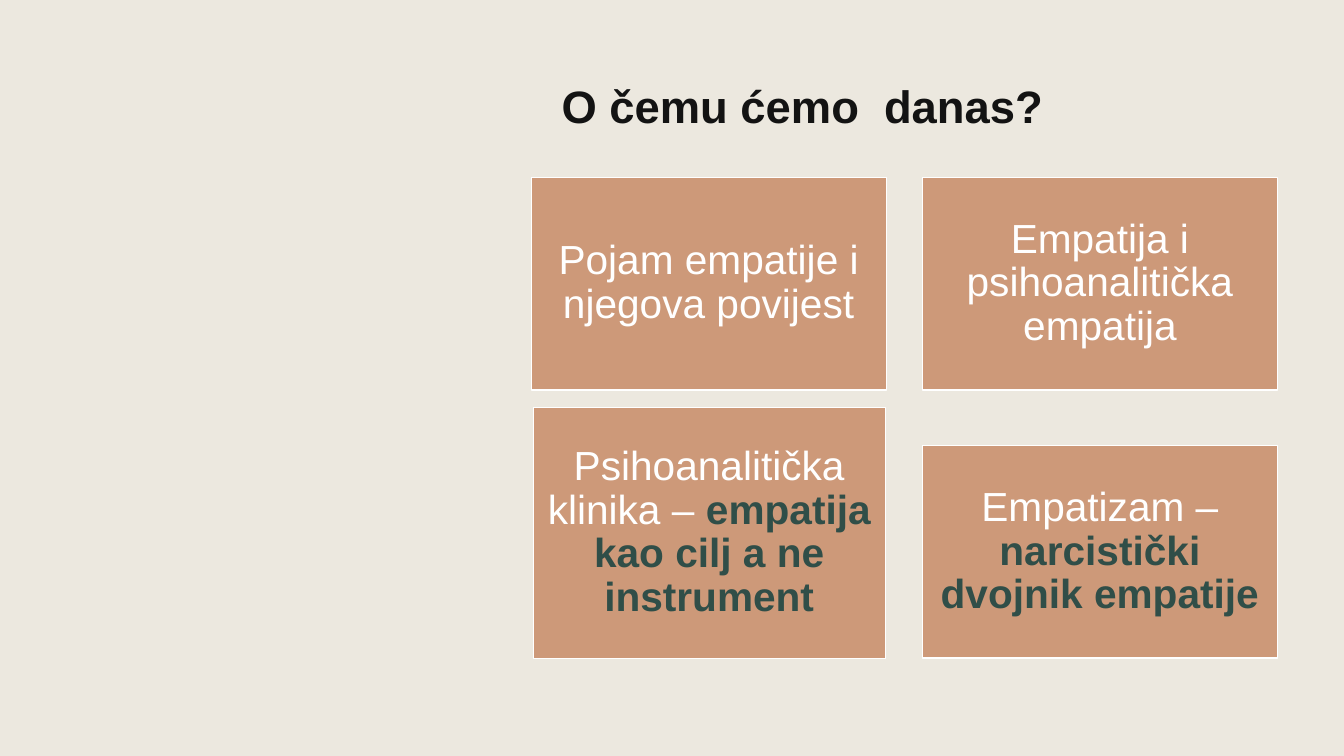
from pptx import Presentation
from pptx import util as u
from pptx.dml import color
from pptx.enum import shapes, text


def rgb(code):
    return color.RGBColor.from_string(code)


def style(run, size, tint, bold=False):
    run.font.name = "Arial"
    run.font.size = u.Pt(size)
    run.font.bold = bold
    run.font.color.rgb = rgb(tint)


deck = Presentation()
deck.slide_width = u.Inches(13.33)
deck.slide_height = u.Inches(7.5)
slide = deck.slides.add_slide(deck.slide_layouts[5])
slide.background.fill.solid()
slide.background.fill.fore_color.rgb = rgb("ECE8DF")

# Title
title = slide.shapes.title
title.left, title.top = u.Inches(5.27), u.Inches(0.35)
title.width, title.height = u.Inches(7.4), u.Inches(1.02)
frame = title.text_frame
frame.text = "O čemu ćemo  danas?"
frame.word_wrap = True
frame.auto_size = text.MSO_AUTO_SIZE.NONE
frame.vertical_anchor = text.MSO_ANCHOR.BOTTOM
frame.margin_left = u.Inches(0.3)
head = frame.paragraphs[0]
head.alignment = text.PP_ALIGN.LEFT
head.line_spacing = 0.9
style(head.runs[0], 32.4, "131313", True)

# Topic cards: left, top, width, height, plain words, bold words
cards = [
    (5.27, 1.76, 3.52, 2.11, "Pojam empatije i njegova povijest", ""),
    (9.15, 1.76, 3.52, 2.11, "Empatija i psihoanalitička empatija", ""),
    (5.29, 4.04, 3.49, 2.49, "Psihoanalitička klinika – ",
     "empatija kao cilj a ne instrument"),
    (9.15, 4.42, 3.52, 2.11, "Empatizam – ", "narcistički dvojnik empatije"),
]
for left, top, width, height, plain, strong in cards:
    card = slide.shapes.add_shape(
        shapes.MSO_SHAPE.RECTANGLE, u.Inches(left), u.Inches(top),
        u.Inches(width), u.Inches(height))
    card.shadow.inherit = False
    card.fill.solid()
    card.fill.fore_color.rgb = rgb("CD9979")
    card.line.color.rgb = rgb("FFFFFF")
    card.line.width = u.Pt(1)

    frame = card.text_frame
    frame.text = plain
    frame.word_wrap = True
    frame.vertical_anchor = text.MSO_ANCHOR.MIDDLE
    frame.margin_left = frame.margin_right = u.Inches(0.12)
    frame.margin_top = frame.margin_bottom = u.Inches(0.12)
    para = frame.paragraphs[0]
    para.alignment = text.PP_ALIGN.CENTER
    para.line_spacing = 0.9
    style(para.runs[0], 29, "FFFFFF")
    if strong:
        run = para.add_run()
        run.text = strong
        style(run, 29, "304E48", True)

deck.save("out.pptx")
